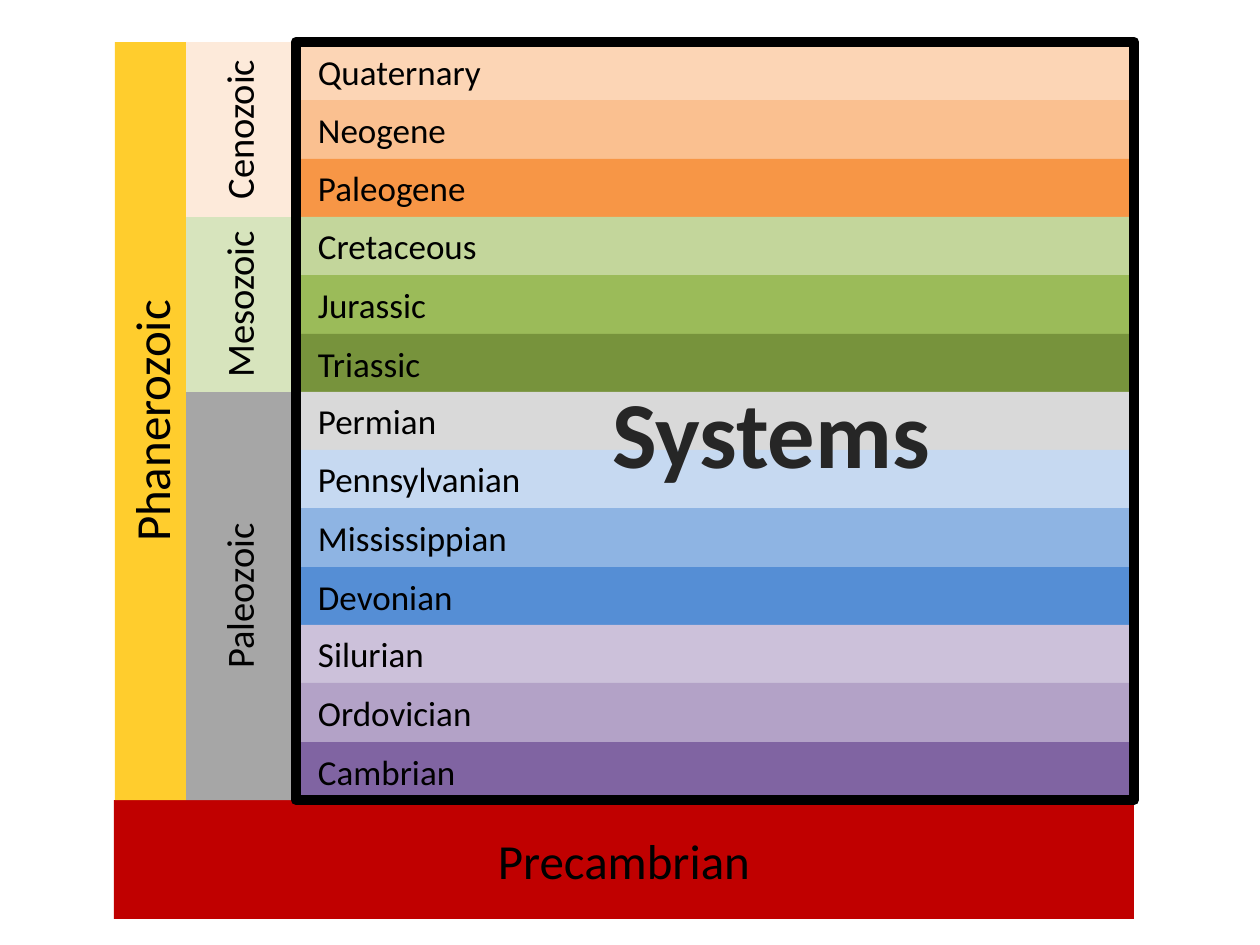
from lxml import etree
from pptx import Presentation
from pptx.dml.color import RGBColor
from pptx.enum.shapes import MSO_SHAPE
from pptx.enum.text import MSO_ANCHOR, MSO_AUTO_SIZE, PP_ALIGN
from pptx.oxml.ns import qn
from pptx.util import Pt

RECT = MSO_SHAPE.RECTANGLE
MIDDLE = MSO_ANCHOR.MIDDLE
LEFT, CENTER = PP_ALIGN.LEFT, PP_ALIGN.CENTER
GROW = MSO_AUTO_SIZE.SHAPE_TO_FIT_TEXT
PX = 914400 / 126

COLORS = {
    "Quaternary": "FCD5B5", "Neogene": "FAC090", "Paleogene": "F79646",
    "Cretaceous": "C3D69B", "Jurassic": "9BBB59", "Triassic": "77933C",
    "Permian": "D9D9D9", "Pennsylvanian": "C6D9F1", "Mississippian": "8EB4E3",
    "Devonian": "558ED5", "Silurian": "CCC1DA", "Ordovician": "B3A2C7",
    "Cambrian": "8064A2", "Precambrian": "C00000", "Paleozoic": "A6A6A6",
    "Mesozoic": "D7E4BD", "Cenozoic": "FDEADA", "Phanerozoic": "FFCD2D",
    "black": "000000", "title": "262626", "white": "FFFFFF",
}
SYSTEMS = list(COLORS)[:13]
TOP, HEIGHT = 42, 758


def write(tf, text, align, color, **font):
    p = tf.paragraphs[0]
    p.alignment = align
    r = p.add_run()
    r.text = text
    for key, value in {"name": "Calibri", **font}.items():
        setattr(r.font, key, value)
    r.font.color.rgb = RGBColor.from_string(COLORS[color])
    return r


def band(name, x, y, w, h, size, align=CENTER, turned=False):
    if turned:
        x, y, w, h = x + (w - h) / 2, y + (h - w) / 2, h, w
    sp = slide.shapes.add_shape(RECT, *(round(v * PX) for v in (x, y, w, h)))
    sp.rotation = 270 if turned else 0
    sp.shadow.inherit = False
    sp.fill.solid()
    sp.fill.fore_color.rgb = RGBColor.from_string(COLORS[name])
    sp.line.fill.background()
    tf = sp.text_frame
    tf.vertical_anchor = MIDDLE
    if align == LEFT:
        tf.margin_left = round(27 * PX)
    write(tf, name, align, "black", size=Pt(size))


prs = Presentation()
prs.slide_width, prs.slide_height = round(1260 * PX), round(945 * PX)
slide = prs.slides.add_slide(prs.slide_layouts[6])

edges = [TOP + round(HEIGHT * i / len(SYSTEMS)) for i in range(len(SYSTEMS) + 1)]
for name, y, end in zip(SYSTEMS, edges, edges[1:]):
    band(name, 291, y, 842, end - y, 20, LEFT)

band("Precambrian", 114, 800, 1020, 119, 28)

for name, first, last in [("Paleozoic", 6, 13), ("Mesozoic", 3, 6), ("Cenozoic", 0, 3)]:
    band(name, 186, edges[first], 105, edges[last] - edges[first], 22, turned=True)
band("Phanerozoic", 115, TOP, 71, HEIGHT, 28, turned=True)

frame = slide.shapes.add_shape(RECT, *(round(v * PX) for v in (296, TOP, 838, HEIGHT)))
frame.shadow.inherit = False
frame.fill.background()
frame.line.color.rgb = RGBColor.from_string(COLORS["black"])
frame.line.width = Pt(6)
etree.SubElement(frame.line._get_or_add_ln(), qn("a:round"))

title = slide.shapes.add_textbox(*(round(v * PX) for v in (598, 368, 346, 127)))
tf = title.text_frame
tf.word_wrap = False
tf.auto_size = GROW
r = write(tf, "Systems", CENTER, "title", size=Pt(54), bold=True)
ln = etree.Element(qn("a:ln"), w=str(Pt(1.06)))
fill = etree.SubElement(ln, qn("a:solidFill"))
etree.SubElement(fill, qn("a:srgbClr"), val=COLORS["white"])
r.font._element.insert(0, ln)

prs.save("out.pptx")
